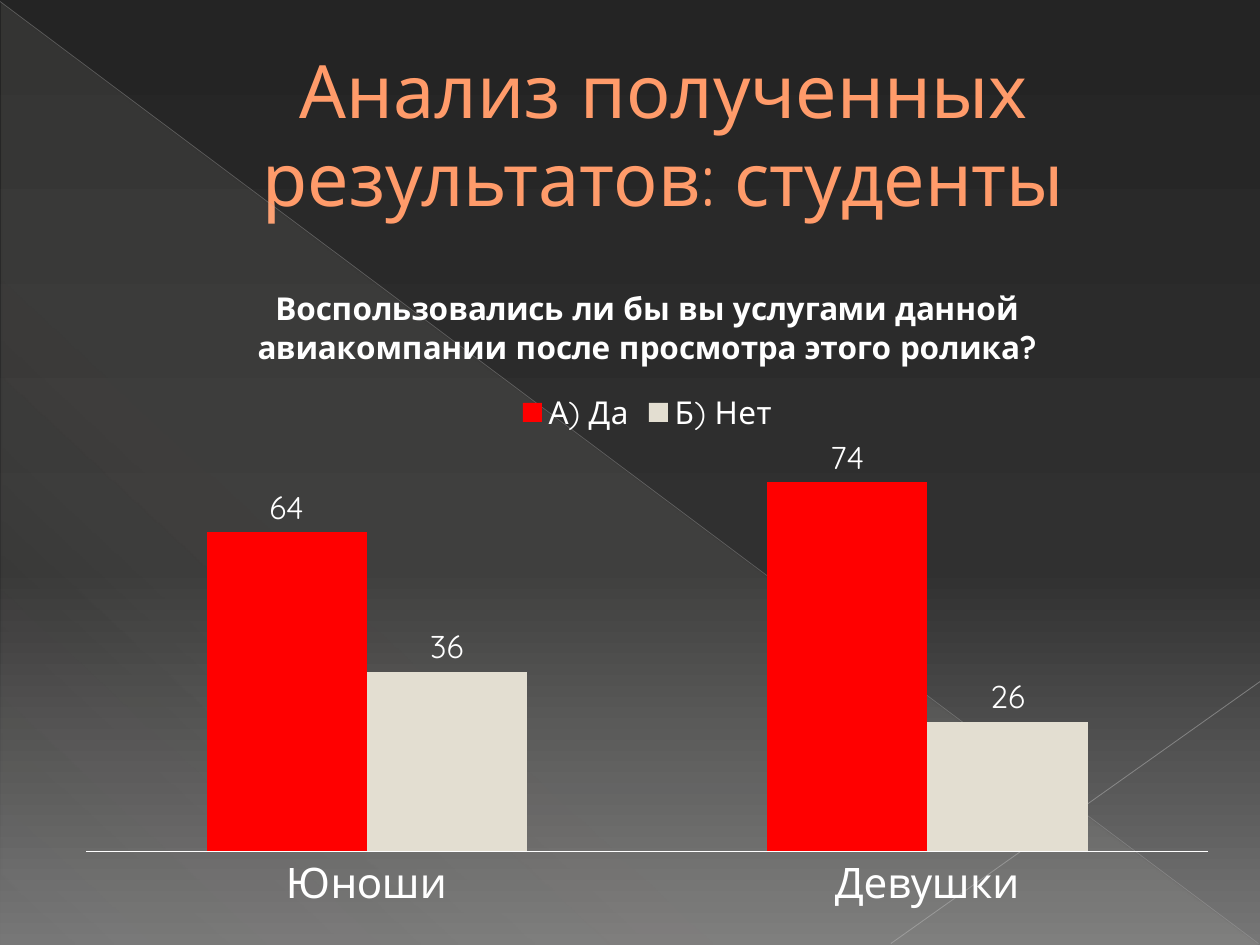
import pptx
import pptx.chart.data
import pptx.dml.color
import pptx.enum.chart
import pptx.enum.shapes
import pptx.enum.text
import pptx.oxml
import pptx.oxml.ns
import pptx.util
from pptx.util import Cm

RGBColor = pptx.dml.color.RGBColor
NIGHT = RGBColor(0x24, 0x24, 0x24)
COAL = RGBColor(0x30, 0x30, 0x30)
ASH = RGBColor(0x76, 0x76, 0x76)
SAND = RGBColor(0xE3, 0xDE, 0xD1)
SILVER = RGBColor(0xB6, 0xB6, 0xB6)
PALE = RGBColor(0xBF, 0xBF, 0xBF)
PEACH = RGBColor(0xFF, 0x9B, 0x6A)
BROWN = RGBColor(0xA6, 0x58, 0x06)
RED = RGBColor(0xFF, 0x00, 0x00)
WHITE = RGBColor(0xFF, 0xFF, 0xFF)
FONT = "Quicksand"
NS = pptx.oxml.ns.nsdecls("a")
qn = pptx.oxml.ns.qn


def set_gradient(fill, owner, stops, angle):
    """Give the fill inside owner linear stops of (position, colour, opacity)."""
    fill.gradient()
    marks = "".join(
        f'<a:gs pos="{position * 1000}"><a:srgbClr val="{color}">'
        f'<a:alpha val="{opacity * 1000}"/></a:srgbClr></a:gs>'
        for position, color, opacity in stops
    )
    gradient = pptx.oxml.parse_xml(
        f'<a:gradFill {NS} rotWithShape="1"><a:gsLst>{marks}</a:gsLst>'
        f'<a:lin ang="{angle * 60000}" scaled="0"/></a:gradFill>'
    )
    previous = owner.find(qn("a:gradFill"))
    owner.replace(previous, gradient)


def add_ray(page, start, end, color, width, opacity):
    """Draw a thin translucent line between two points in centimetres."""
    ray = page.shapes.add_connector(
        pptx.enum.shapes.MSO_CONNECTOR.STRAIGHT, *map(Cm, start + end)
    )
    ray.line.width = pptx.util.Pt(width)
    ray.line.color.rgb = color
    properties = ray.element.spPr
    alpha = pptx.oxml.parse_xml(f'<a:alpha {NS} val="{opacity * 1000}"/>')
    properties.find(".//" + qn("a:srgbClr")).append(alpha)
    properties.append(pptx.oxml.parse_xml(f"<a:effectLst {NS}/>"))


def add_backdrop(page, left, top, width, height):
    """Fill the page and lay the translucent triangle and rays over it."""
    set_gradient(
        page.background.fill,
        page.element.find(".//" + qn("p:bgPr")),
        [(0, NIGHT, 100), (60, COAL, 100), (100, ASH, 100)],
        90,
    )
    triangle = page.shapes.add_shape(
        pptx.enum.shapes.MSO_SHAPE.RIGHT_TRIANGLE,
        Cm(left + 0.03), Cm(top + 0.05), Cm(width - 0.05), Cm(height - 0.05),
    )
    triangle.shadow.inherit = False
    triangle.line.fill.background()
    set_gradient(
        triangle.fill, triangle.element.spPr,
        [(0, SAND, 10), (70, SAND, 8), (100, SAND, 1)], 133,
    )
    right, bottom = left + width, top + height
    add_ray(page, (left, top + 0.03), (right - 0.03, bottom - 0.03), SILVER, 0.39, 35)
    add_ray(page, (right, bottom - 5.31), (right - 7.44, bottom - 0.03), PALE, 0.47, 45)


def add_title(page, left, top, width, height):
    """Place the slide heading in the title placeholder."""
    title = page.shapes.title
    title.left, title.top = Cm(left), Cm(top)
    title.width, title.height = Cm(width), Cm(height)
    frame = title.text_frame
    frame.text = "Анализ полученных результатов: студенты"
    frame.word_wrap = True
    frame.auto_size = pptx.enum.text.MSO_AUTO_SIZE.NONE
    frame.vertical_anchor = pptx.enum.text.MSO_ANCHOR.MIDDLE
    para = frame.paragraphs[0]
    para.alignment = pptx.enum.text.PP_ALIGN.CENTER
    para.font.name = FONT
    para.font.size = pptx.util.Pt(42)
    para.font.color.rgb = PEACH
    properties = para._p.get_or_add_pPr()
    properties.set("marL", str(Cm(1.35)))
    properties.set("indent", "0")
    outline = pptx.oxml.parse_xml(
        f'<a:ln {NS} w="{pptx.util.Pt(0.5)}"><a:solidFill>'
        f'<a:srgbClr val="{BROWN}"/></a:solidFill></a:ln>'
    )
    properties.find(qn("a:defRPr")).insert(0, outline)


def style_font(font, size, bold=False):
    """Set the shared chart typeface at the given size."""
    font.name = FONT
    font.size = pptx.util.Pt(size)
    font.bold = bold
    font.color.rgb = WHITE


def set_plot_area(chart, **shares):
    """Fix the inner plot area as shares of the chart size."""
    parts = "".join(f'<c:{key} val="{share}"/>' for key, share in shares.items())
    layout = pptx.oxml.parse_xml(
        f'<c:layout {pptx.oxml.ns.nsdecls("c")}><c:manualLayout>'
        '<c:layoutTarget val="inner"/><c:xMode val="edge"/><c:yMode val="edge"/>'
        f"{parts}</c:manualLayout></c:layout>"
    )
    area = chart.element.find(".//" + qn("c:plotArea"))
    previous = area.find(qn("c:layout"))
    if previous is not None:
        area.remove(previous)
    area.insert(0, layout)


def add_answers_chart(page, left, top, width, height):
    """Compare the answers of young men and women in clustered columns."""
    answers = pptx.chart.data.CategoryChartData()
    answers.categories = ["Юноши", "Девушки"]
    answers.add_series("А) Да", [64, 74])
    answers.add_series("Б) Нет", [36, 26])
    chart = page.shapes.add_chart(
        pptx.enum.chart.XL_CHART_TYPE.COLUMN_CLUSTERED,
        Cm(left), Cm(top), Cm(width), Cm(height), answers,
    ).chart
    style_font(chart.font, 10)

    chart.has_title = True
    heading = chart.chart_title.text_frame
    heading.text = "Воспользовались ли бы вы услугами данной авиакомпании после просмотра этого ролика?"
    style_font(heading.paragraphs[0].font, 18, bold=True)
    chart.chart_title.include_in_layout = False

    chart.has_legend = True
    chart.legend.position = pptx.enum.chart.XL_LEGEND_POSITION.TOP
    chart.legend.include_in_layout = False
    style_font(chart.legend.font, 18)

    categories = chart.category_axis
    categories.major_tick_mark = pptx.enum.chart.XL_TICK_MARK.NONE
    categories.format.line.color.rgb = WHITE
    style_font(categories.tick_labels.font, 24)
    values = chart.value_axis
    values.visible = False
    values.has_major_gridlines = False
    values.minimum_scale, values.maximum_scale = 0, 80

    plot = chart.plots[0]
    plot.gap_width, plot.overlap = 150, 0
    plot.vary_by_categories = False
    for series, color in zip(plot.series, (RED, SAND)):
        series.format.fill.solid()
        series.format.fill.fore_color.rgb = color
        labels = series.data_labels
        labels.show_value = True
        labels.position = pptx.enum.chart.XL_LABEL_POSITION.OUTSIDE_END
        style_font(labels.font, 18)
    set_plot_area(chart, x=0.02, y=0.29, w=0.96, h=0.6)


def main():
    """Build the deck and save it."""
    deck = pptx.Presentation()
    deck.slide_width, deck.slide_height = Cm(25.4), Cm(19.05)
    page = deck.slides.add_slide(deck.slide_layouts.get_by_name("Title Only"))
    add_backdrop(page, 0, 0, 25.4, 19.05)
    add_title(page, 1.27, 0.74, 22.86, 3.89)
    add_answers_chart(page, 1.27, 5.23, 23.55, 13.41)
    deck.save("out.pptx")


if __name__ == "__main__":
    main()
